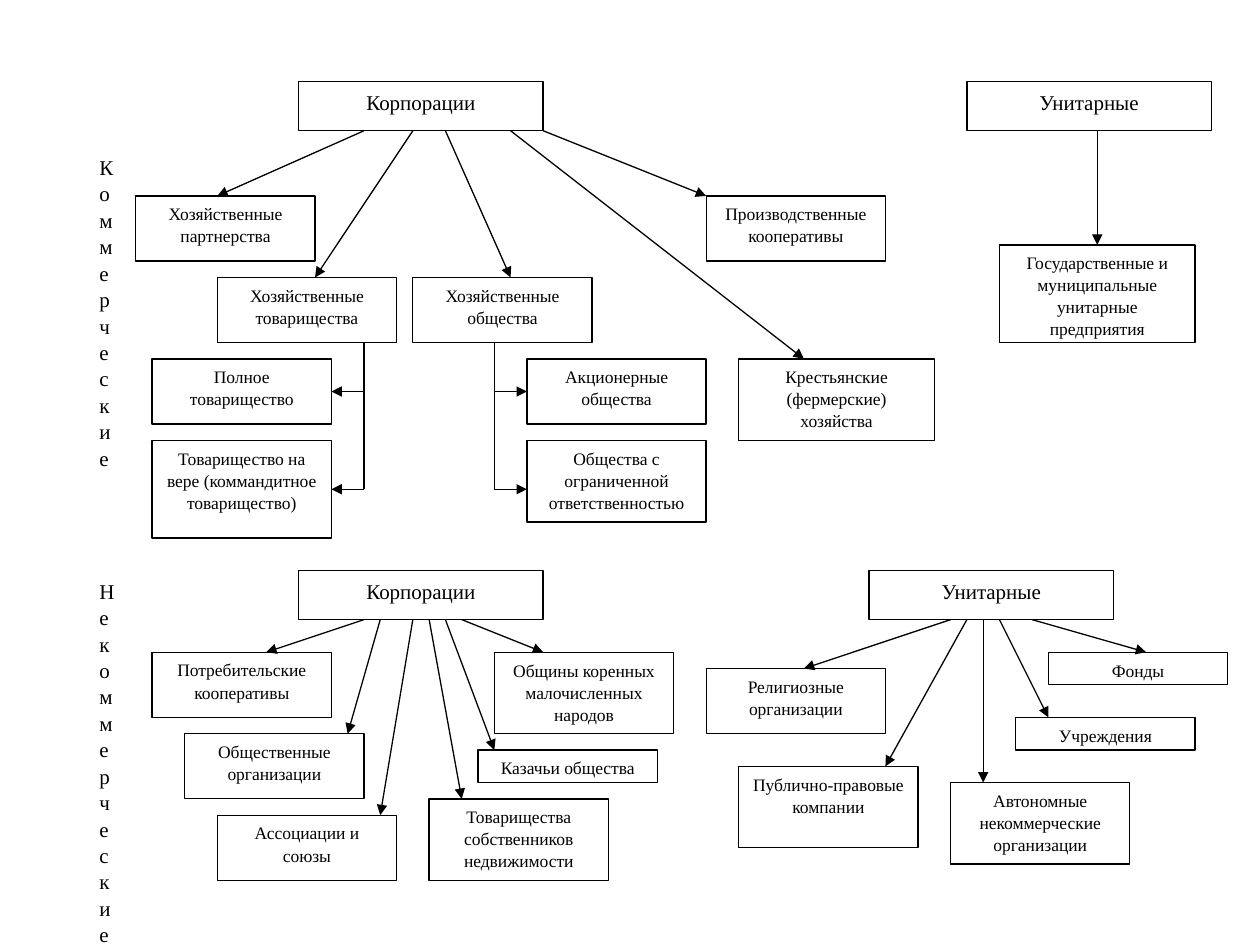
from typing import NamedTuple

from lxml.etree import SubElement
from pptx import Presentation
from pptx.dml.color import RGBColor
from pptx.enum.shapes import MSO_CONNECTOR, MSO_SHAPE
from pptx.enum.text import MSO_ANCHOR, PP_ALIGN
from pptx.oxml.ns import qn
from pptx.shapes.connector import Connector
from pptx.slide import Slide
from pptx.util import Inches, Pt

COLORS = {"paper": "FFFFFF", "ink": "000000"}
FONT = "Times New Roman"

# The diagram sits on a square grid; a heading box is 15 steps wide
STEP = Inches(1.94) / 15
LEFT, TOP = Inches(0.69), Inches(0.65)


class Box(NamedTuple):
    text: str
    column: int
    row: int
    width: int = 11
    height: int = 4


class Arrow(NamedTuple):
    start_column: int
    start_row: int
    end_column: int
    end_row: int


HEADINGS = [
    Box("Корпорации", 13, 0, 15, 3),
    Box("Унитарные", 54, 0, 15, 3),
    Box("Корпорации", 13, 30, 15, 3),
    Box("Унитарные", 48, 30, 15, 3),
]

# Narrow labels whose letters stack one per line
SIDE_LABELS = [
    Box("Коммерческие", 0, 4, 2, 20),
    Box("Некоммерческие", 0, 30, 2, 23),
]

COMMERCIAL = [
    Box("Хозяйственные партнерства", 3, 7),
    Box("Хозяйственные товарищества", 8, 12),
    Box("Хозяйственные общества", 20, 12),
    Box("Производственные кооперативы", 38, 7),
    Box("Полное товарищество", 4, 17),
    Box("Товарищество на вере (коммандитное товарищество)", 4, 22, height=6),
    Box("Акционерные общества", 27, 17),
    Box("Общества с ограниченной ответственностью", 27, 22, height=5),
    Box("Крестьянские (фермерские) хозяйства", 40, 17, 12, 5),
    Box("Государственные и муниципальные унитарные предприятия", 56, 10, 12, 6),
]

NONCOMMERCIAL = [
    Box("Потребительские кооперативы", 4, 35),
    Box("Общественные организации", 6, 40),
    Box("Ассоциации и союзы", 8, 45),
    Box("Товарищества собственников недвижимости", 21, 44, height=5),
    Box("Казачьи общества", 24, 41, height=2),
    Box("Общины коренных малочисленных народов", 25, 35, height=5),
    Box("Религиозные организации", 38, 36),
    Box("Публично-правовые компании", 40, 42, height=5),
    Box("Автономные некоммерческие организации", 53, 43, height=5),
    Box("Учреждения", 57, 39, height=2),
    Box("Фонды", 59, 35, height=2),
]

# Each fan: row it leaves from, then (start column, end column, end row)
FANS = {
    3: [(17, 8, 7), (20, 14, 12), (22, 26, 12), (28, 38, 7),
        (26, 44, 17), (62, 62, 10)],
    33: [(17, 11, 35), (18, 16, 40), (20, 18, 45), (21, 23, 44),
         (22, 25, 41), (23, 28, 35), (53, 44, 36), (54, 49, 42),
         (55, 55, 43), (56, 59, 39), (58, 65, 35)],
}

# Brackets: trunk column and the column its branches point to
BRACKETS = [(17, 15), (25, 27)]
TRUNK_TOP, BRANCH_ROWS = 16, (19, 25)


def x_at(column: int) -> int:
    return round(LEFT + column * STEP)


def y_at(row: int) -> int:
    return round(TOP + row * STEP)


def color(name: str) -> RGBColor:
    return RGBColor.from_string(COLORS[name])


def draw_box(slide: Slide, box: Box, size: int = 10, label: bool = False) -> None:
    shape = slide.shapes.add_shape(
        MSO_SHAPE.RECTANGLE, x_at(box.column), y_at(box.row),
        round(box.width * STEP), round(box.height * STEP))
    shape.shadow.inherit = False
    shape.fill.solid()
    shape.fill.fore_color.rgb = color("paper")
    if label:
        shape.line.fill.background()
    else:
        shape.line.color.rgb = color("ink")
        shape.line.width = Pt(0.75)

    text_frame = shape.text_frame
    text_frame.text = box.text
    text_frame.word_wrap = True
    text_frame.vertical_anchor = MSO_ANCHOR.TOP
    paragraph = text_frame.paragraphs[0]
    paragraph.alignment = PP_ALIGN.LEFT if label else PP_ALIGN.CENTER
    paragraph.line_spacing = 1.05
    font = paragraph.runs[0].font
    font.name, font.size = FONT, Pt(size)
    font.color.rgb = color("ink")


def draw_line(slide: Slide, arrow: Arrow) -> Connector:
    connector = slide.shapes.add_connector(
        MSO_CONNECTOR.STRAIGHT,
        x_at(arrow.start_column), y_at(arrow.start_row),
        x_at(arrow.end_column), y_at(arrow.end_row))
    connector.line.color.rgb = color("ink")
    connector.line.width = Pt(0.75)
    SubElement(connector.element.spPr, qn("a:effectLst"))
    return connector


def draw_arrow(slide: Slide, arrow: Arrow) -> None:
    connector = draw_line(slide, arrow)
    SubElement(connector.line._get_or_add_ln(), qn("a:tailEnd"), type="triangle")


def main() -> None:
    presentation = Presentation()
    presentation.slide_width, presentation.slide_height = Inches(10), Inches(7.5)
    slide = presentation.slides.add_slide(presentation.slide_layouts[6])

    # Boxes and side labels
    for box in HEADINGS:
        draw_box(slide, box, size=12)
    for box in SIDE_LABELS:
        draw_box(slide, box, size=12, label=True)
    for box in COMMERCIAL + NONCOMMERCIAL:
        draw_box(slide, box)

    # Arrows fanning out from the headings
    for start_row, targets in FANS.items():
        for start_column, end_column, end_row in targets:
            draw_arrow(slide, Arrow(start_column, start_row, end_column, end_row))

    # Brackets leading to the subtypes
    for trunk, tip in BRACKETS:
        draw_line(slide, Arrow(trunk, TRUNK_TOP, trunk, BRANCH_ROWS[-1]))
        for row in BRANCH_ROWS:
            draw_arrow(slide, Arrow(trunk, row, tip, row))

    presentation.save("out.pptx")


if __name__ == "__main__":
    main()
